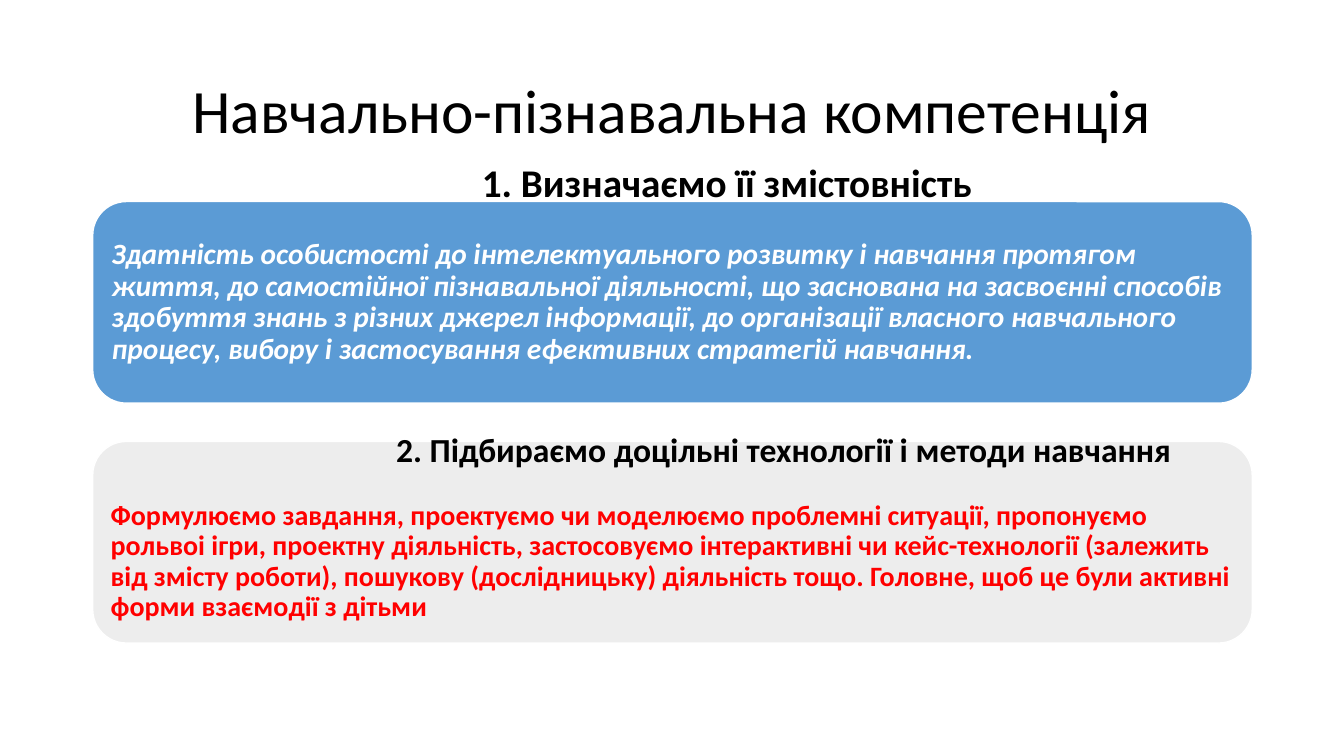
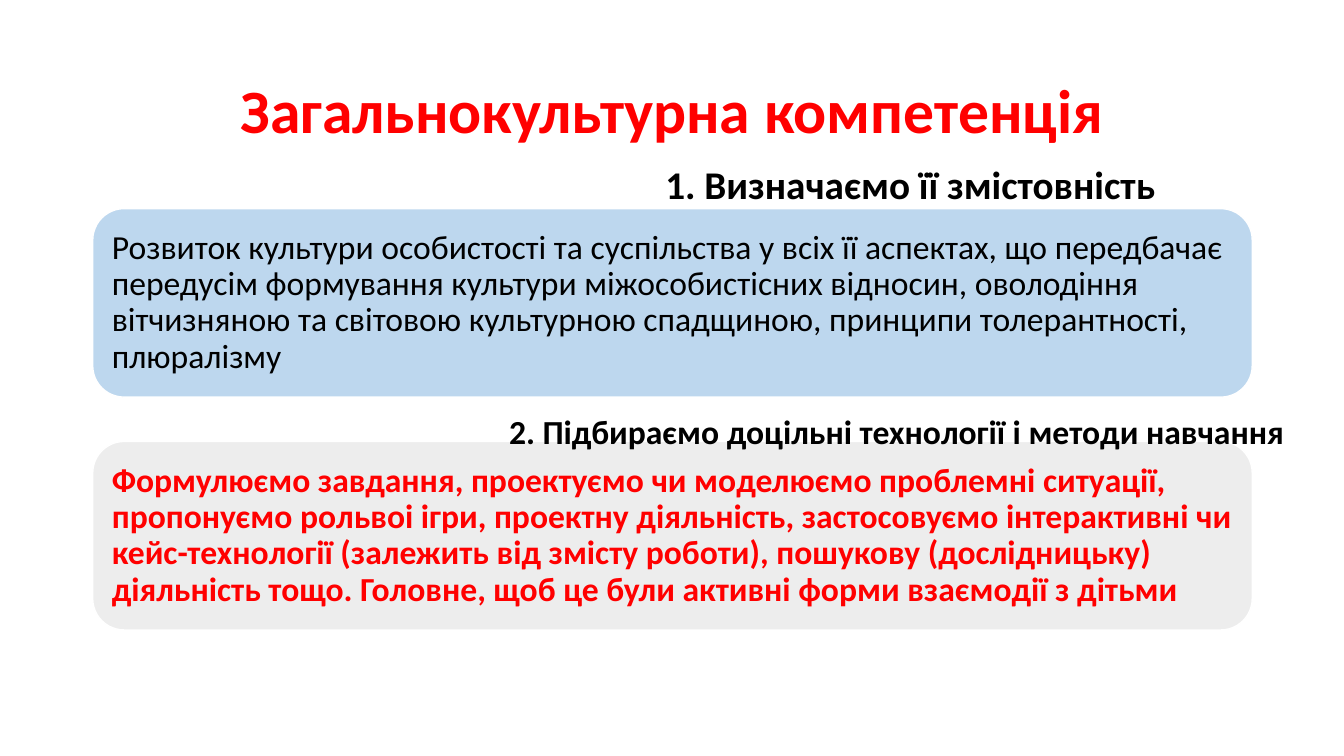
from pptx import Presentation
from pptx.dml.color import RGBColor
from pptx.enum.shapes import MSO_SHAPE as Shape
from pptx.enum.text import MSO_ANCHOR as Anchor, PP_ALIGN as Align
from pptx.util import Inches, Pt

FONT = "Calibri"
COLORS = {
    "black": "000000",
    "white": "FFFFFF",
    "red": "FF0000",
    "blue": "5B9BD5",
    "pale_blue": "BDD7EE",
    "gray": "EDEDED",
}
LEFT, WIDTH = 0.92, 11.5
METHODS_TOP = 4.38

CONTENT_HEADING = "1. Визначаємо її змістовність"
METHODS_HEADING = "2. Підбираємо доцільні технології і методи навчання"
METHODS = (
    "Формулюємо завдання, проектуємо чи моделюємо проблемні ситуації, "
    "пропонуємо рольвоі ігри, проектну діяльність, застосовуємо інтерактивні "
    "чи кейс-технології (залежить від змісту роботи), пошукову (дослідницьку) "
    "діяльність тощо. Головне, щоб це були активні форми взаємодії з дітьми"
)
LEARNING = (
    "Здатність особистості до інтелектуального розвитку і навчання протягом "
    "життя, до самостійної пізнавальної діяльності, що заснована на засвоєнні "
    "способів здобуття знань з різних джерел інформації, до організації "
    "власного навчального процесу, вибору і застосування ефективних стратегій "
    "навчання."
)
CULTURE = (
    "Розвиток культури особистості та суспільства у всіх її аспектах, що "
    "передбачає передусім формування культури міжособистісних відносин, "
    "оволодіння вітчизняною та світовою культурною спадщиною, принципи "
    "толерантності, плюралізму"
)


def color(name):
    return RGBColor.from_string(COLORS[name])


def write(frame, text, size, ink="black", bold=False, italic=False,
          align=Align.LEFT, spacing=0.9):
    frame.word_wrap = True
    para = frame.paragraphs[0]
    para.text = text
    para.alignment = align
    para.line_spacing = spacing
    font = para.font
    font.name, font.size = FONT, Pt(size)
    font.bold, font.italic = bold, italic
    font.color.rgb = color(ink)


def add_title(page, text, ink="black", bold=False):
    box = page.shapes.add_textbox(Inches(LEFT), Inches(0.4), Inches(WIDTH), Inches(1.45))
    box.text_frame.vertical_anchor = Anchor.MIDDLE
    write(box.text_frame, text, 44, ink, bold, align=Align.CENTER)


def add_heading(page, text, left, top, width, size):
    box = page.shapes.add_textbox(Inches(left), Inches(top), Inches(width), Inches(0.5))
    write(box.text_frame, text, size, bold=True, spacing=1.0)


def add_card(page, text, top, height, fill, size, inset, extra_top=0, **style):
    card = page.shapes.add_shape(
        Shape.ROUNDED_RECTANGLE, Inches(LEFT), Inches(top), Inches(WIDTH), Inches(height))
    card.shadow.inherit = False
    card.fill.solid()
    card.fill.fore_color.rgb = color(fill)
    card.line.color.rgb = color("white")
    card.line.width = Pt(1)
    frame = card.text_frame
    frame.vertical_anchor = Anchor.MIDDLE
    frame.margin_left = frame.margin_right = frame.margin_bottom = Inches(inset)
    frame.margin_top = Inches(inset + extra_top)
    write(frame, text, size, **style)


def add_learning_page(page):
    add_title(page, "Навчально-пізнавальна компетенція")
    add_card(page, LEARNING, 2, 2, "blue", 21, 0.09, ink="white", bold=True, italic=True)
    add_card(page, METHODS, METHODS_TOP, 2, "gray", 20, 0.08, extra_top=0.39,
             ink="red", bold=True)
    add_heading(page, CONTENT_HEADING, 4.68, 1.52, 6.68, 28)
    add_heading(page, METHODS_HEADING, 3.83, 4.21, 9, 24)


def add_culture_page(page):
    add_title(page, "Загальнокультурна компетенція", "red", bold=True)
    add_card(page, CULTURE, 2.07, 1.87, "pale_blue", 24, 0.1)
    add_card(page, METHODS, METHODS_TOP, 1.87, "gray", 24, 0.1, ink="red", bold=True)
    add_heading(page, CONTENT_HEADING, 6.5, 1.54, 5.47, 28)
    add_heading(page, METHODS_HEADING, 4.95, 4.03, 7.91, 24)


def main():
    deck = Presentation()
    deck.slide_width, deck.slide_height = Inches(13.33), Inches(7.5)
    blank = deck.slide_layouts[6]
    for add_page in (add_learning_page, add_culture_page):
        add_page(deck.slides.add_slide(blank))
    deck.save("out.pptx")


if __name__ == "__main__":
    main()
